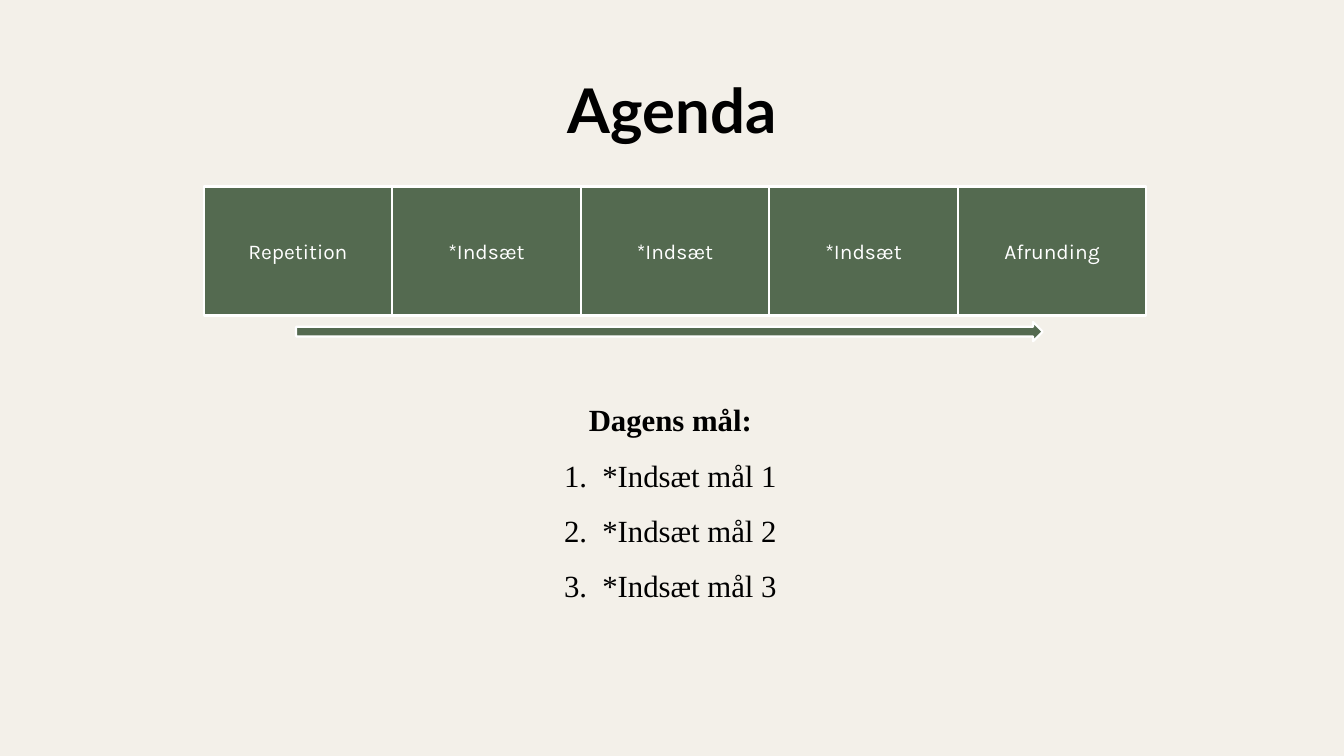
import dataclasses

import lxml.etree
import pptx
import pptx.dml.color
import pptx.enum.shapes
import pptx.enum.text
import pptx.oxml.ns
import pptx.util


@dataclasses.dataclass(frozen=True)
class Theme:
    background: str = "F3F0E9"
    green: str = "546A50"
    white: str = "FFFFFF"
    black: str = "000000"
    title_font: str = "Lato"
    step_font: str = "Karla"
    goal_font: str = "Times New Roman"
    title_size: int = 44
    step_size: int = 15
    goal_size: int = 22
    outline: float = 1.5


class AgendaPage:
    """A slide on a grid whose first cell is the first agenda step."""

    left, top = 2.02, 1.85
    column_width, row_height = 1.87, 1.28

    def __init__(self, deck, theme):
        self.theme = theme
        self.page = deck.slides.add_slide(deck.slide_layouts[1])
        fill = self.page.background.fill
        fill.solid()
        fill.fore_color.rgb = self.color(theme.background)

    def color(self, code):
        return pptx.dml.color.RGBColor.from_string(code)

    def area(self, column, row, columns, rows):
        """Turn grid units into left, top, width and height."""
        return (
            pptx.util.Inches(self.left + column * self.column_width),
            pptx.util.Inches(self.top + row * self.row_height),
            pptx.util.Inches(columns * self.column_width),
            pptx.util.Inches(rows * self.row_height),
        )

    def place(self, box, area):
        box.left, box.top, box.width, box.height = self.area(*area)

    def style(self, para, font, size, color, bold=False, spacing=1.0):
        para.alignment = pptx.enum.text.PP_ALIGN.CENTER
        para.line_spacing = spacing
        para.space_before = pptx.util.Pt(0)
        for span in para.runs:
            span.font.name = font
            span.font.size = pptx.util.Pt(size)
            span.font.bold = bold
            span.font.color.rgb = self.color(color)

    def bullet(self, para, numbered):
        properties = para._p.get_or_add_pPr()
        indent = pptx.util.Inches(0.38 if numbered else 0)
        properties.set("marL", str(indent))
        properties.set("indent", str(-indent))
        tag = "a:buAutoNum" if numbered else "a:buNone"
        mark = lxml.etree.SubElement(properties, pptx.oxml.ns.qn(tag))
        if numbered:
            mark.set("type", "arabicPeriod")

    def title(self, text, *area):
        box = self.page.shapes.title
        self.place(box, area)
        box.text_frame.text = text
        box.text_frame.vertical_anchor = pptx.enum.text.MSO_ANCHOR.MIDDLE
        self.style(box.text_frame.paragraphs[0], self.theme.title_font,
                   self.theme.title_size, self.theme.black, True, 0.9)

    def shape(self, kind, *area):
        box = self.page.shapes.add_shape(kind, *self.area(*area))
        box.shadow.inherit = False
        box.fill.solid()
        box.fill.fore_color.rgb = self.color(self.theme.green)
        box.line.color.rgb = self.color(self.theme.white)
        box.line.width = pptx.util.Pt(self.theme.outline)
        return box

    def step(self, text, column):
        box = self.shape(pptx.enum.shapes.MSO_SHAPE.RECTANGLE, column, 0, 1, 1)
        box.text_frame.text = text
        box.text_frame.vertical_anchor = pptx.enum.text.MSO_ANCHOR.MIDDLE
        self.style(box.text_frame.paragraphs[0], self.theme.step_font,
                   self.theme.step_size, self.theme.white)

    def arrow(self, *area):
        self.shape(pptx.enum.shapes.MSO_SHAPE.RIGHT_ARROW, *area)

    def goals(self, heading, items, *area):
        box = self.page.placeholders[1]
        self.place(box, area)
        frame = box.text_frame
        frame.text = "\n".join([heading, *items])
        frame.auto_size = pptx.enum.text.MSO_AUTO_SIZE.SHAPE_TO_FIT_TEXT
        for index, para in enumerate(frame.paragraphs):
            self.style(para, self.theme.goal_font, self.theme.goal_size,
                       self.theme.black, bold=index == 0, spacing=1.5)
            self.bullet(para, numbered=index > 0)


def main():
    deck = pptx.Presentation()
    deck.slide_width = pptx.util.Inches(13.33)
    deck.slide_height = pptx.util.Inches(7.5)

    agenda = AgendaPage(deck, Theme())
    agenda.title("Agenda", -0.59, -1.13, 6.15, 1.13)
    steps = ["Repetition", "*Indsæt", "*Indsæt", "*Indsæt", "Afrunding"]
    for column, text in enumerate(steps):
        agenda.step(text, column)
    agenda.arrow(0.49, 1.05, 3.96, 0.15)
    goals = [f"*Indsæt mål {number}" for number in range(1, 4)]
    agenda.goals("Dagens mål:", goals, 0, 1.48, 4.95, 1.77)

    deck.save("out.pptx")


if __name__ == "__main__":
    main()
